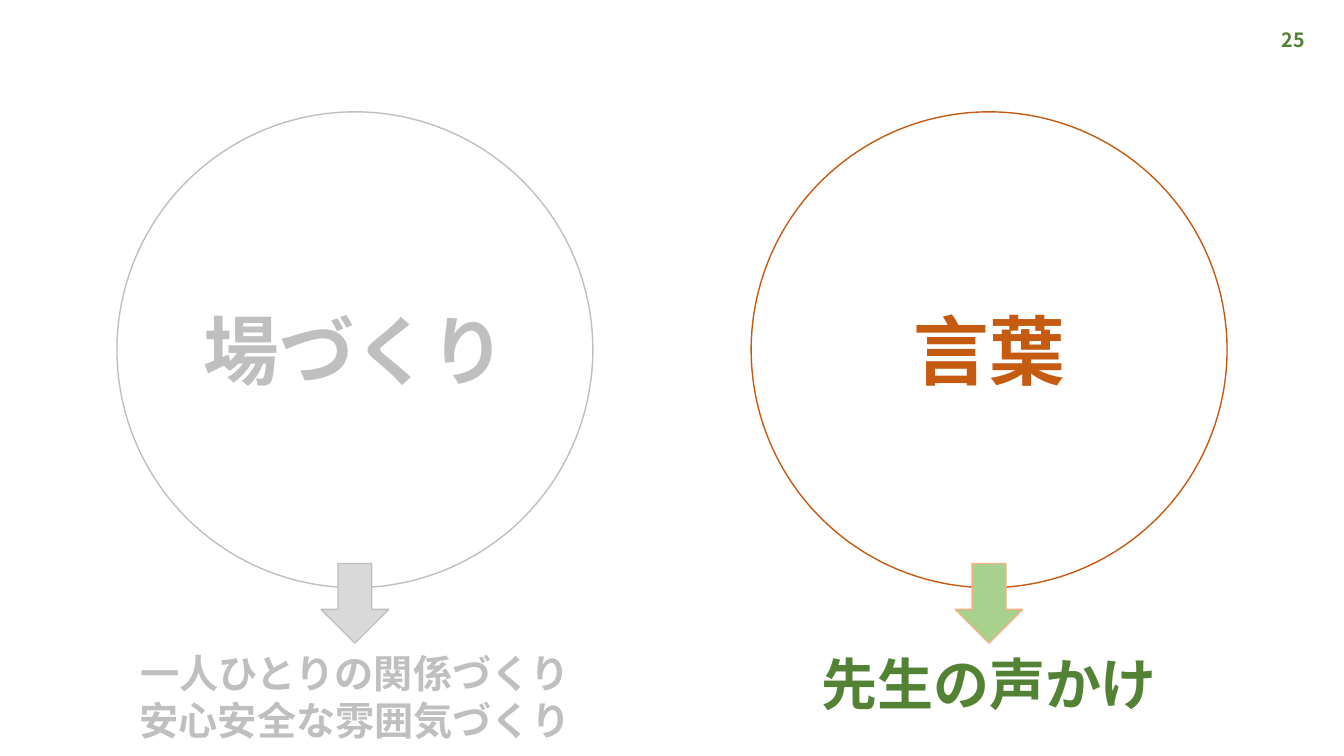
from lxml.etree import SubElement
from pptx import Presentation
from pptx.dml.color import RGBColor
from pptx.enum.shapes import MSO_SHAPE
from pptx.enum.text import MSO_ANCHOR, PP_ALIGN
from pptx.oxml.ns import qn
from pptx.util import Inches, Pt

FONT = "Noto Sans CJK JP"
COLORS = {
    "white": "FFFFFF",
    "muted": "BFBFBF",
    "muted_fill": "D9D9D9",
    "orange": "C55A11",
    "orange_light": "F4B183",
    "green": "548235",
    "green_light": "A9D18E",
}
WIDTH, HEIGHT = 13.33, 7.5

# Two columns, each described by its centre line, and shared rows
FIRST_CENTER, COLUMN_STEP = 3.52, 6.29
CIRCLE_TOP, CIRCLE_SIZE = 1.11, 4.72
ARROW_TOP, ARROW_WIDTH, ARROW_HEIGHT = 5.59, 0.67, 0.79
CAPTION_TOP = 6.39


class SlideBuilder:
    """Holds the slide and the shared text and shape style."""

    def __init__(self, slide):
        self.slide = slide

    def color(self, name):
        return RGBColor.from_string(COLORS[name])

    def center_box(self, column, top, width, height):
        left = FIRST_CENTER + column * COLUMN_STEP - width / 2
        return [Inches(value) for value in (left, top, width, height)]

    def set_text(self, shape, lines, size, color, align=PP_ALIGN.CENTER):
        frame = shape.text_frame
        frame.text = "\n".join(lines)
        for paragraph in frame.paragraphs:
            paragraph.alignment = align
            font = paragraph.font
            font.name, font.size, font.bold = FONT, Pt(size), True
            font.color.rgb = self.color(color)
            # Japanese glyphs take the East Asian typeface
            properties = paragraph._p.pPr.find(qn("a:defRPr"))
            SubElement(properties, qn("a:ea"), typeface=FONT)

    def shape(self, kind, box, fill, line):
        shape = self.slide.shapes.add_shape(kind, *box)
        shape.shadow.inherit = False
        shape.fill.solid()
        shape.fill.fore_color.rgb = self.color(fill)
        shape.line.color.rgb = self.color(line)
        shape.line.width = Pt(1)
        return shape

    def circle(self, column, label, color):
        box = self.center_box(column, CIRCLE_TOP, CIRCLE_SIZE, CIRCLE_SIZE)
        circle = self.shape(MSO_SHAPE.OVAL, box, "white", color)
        circle.text_frame.vertical_anchor = MSO_ANCHOR.MIDDLE
        self.set_text(circle, [label], 54, color)

    def caption(self, column, lines, width, height, size, color):
        box = self.center_box(column, CAPTION_TOP, width, height)
        caption = self.slide.shapes.add_textbox(*box)
        caption.text_frame.word_wrap = False
        self.set_text(caption, lines, size, color)

    def arrow(self, column, fill, line):
        box = self.center_box(column, ARROW_TOP, ARROW_WIDTH, ARROW_HEIGHT)
        self.shape(MSO_SHAPE.DOWN_ARROW, box, fill, line)

    def page_number(self, number):
        box = [Inches(value) for value in (10.04, 0.19, 3, 0.4)]
        text_box = self.slide.shapes.add_textbox(*box)
        text_box.text_frame.word_wrap = True
        text_box.text_frame.vertical_anchor = MSO_ANCHOR.MIDDLE
        self.set_text(text_box, [number], 14, "green", PP_ALIGN.RIGHT)


def main():
    presentation = Presentation()
    presentation.slide_width = Inches(WIDTH)
    presentation.slide_height = Inches(HEIGHT)
    blank_layout = presentation.slide_layouts[6]
    builder = SlideBuilder(presentation.slides.add_slide(blank_layout))

    builder.page_number("25")

    # Themes
    builder.circle(0, "場づくり", "muted")
    builder.circle(1, "言葉", "orange")

    # What each theme leads to
    outcomes = ["一人ひとりの関係づくり", "安心安全な雰囲気づくり"]
    builder.caption(0, outcomes, 4.52, 1.04, 28, "muted")
    builder.caption(1, ["先生の声かけ"], 3.57, 0.77, 40, "green")

    # Arrows from theme to outcome
    builder.arrow(0, "muted_fill", "muted")
    builder.arrow(1, "green_light", "orange_light")

    presentation.save("out.pptx")


if __name__ == "__main__":
    main()
